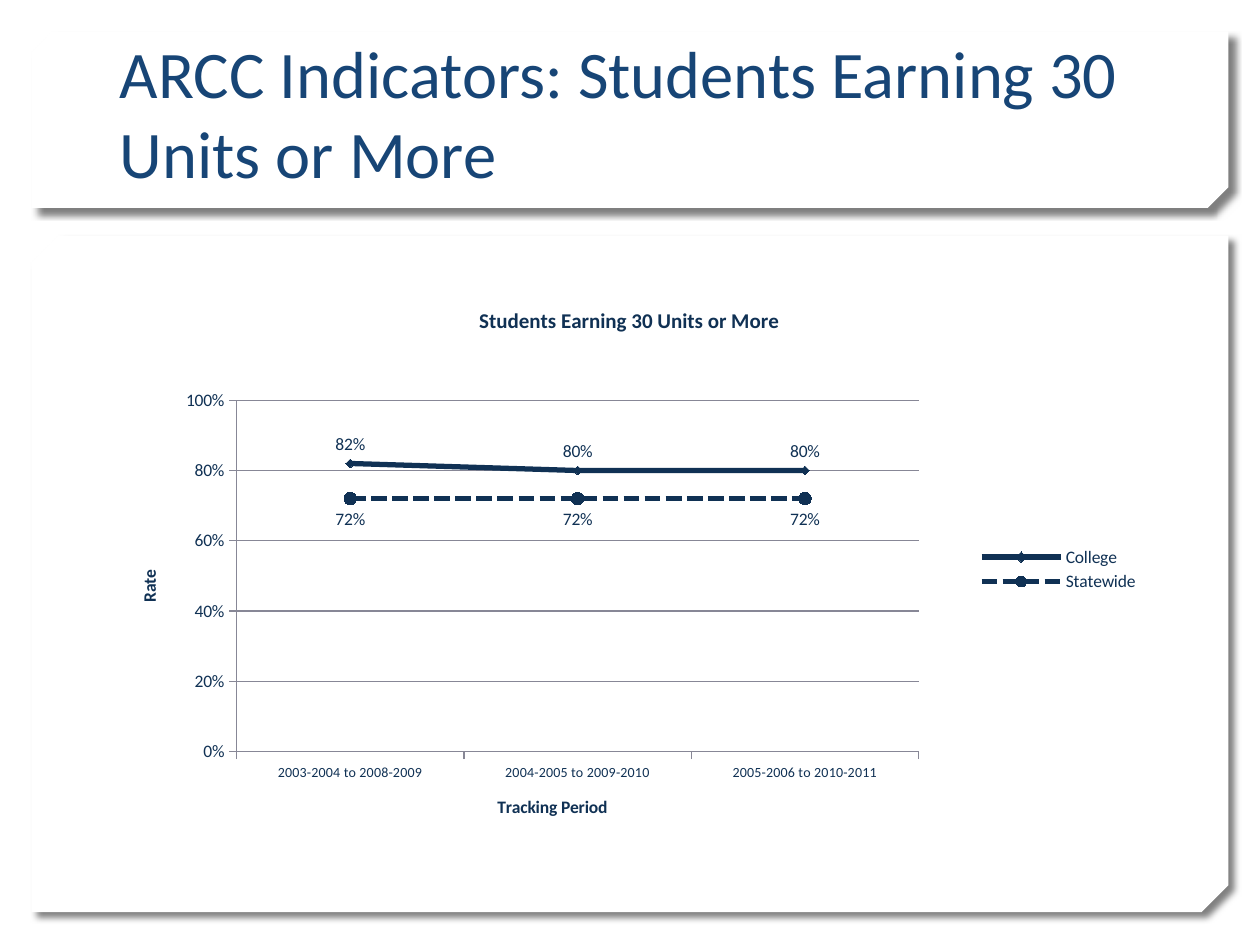
"""Build a slide with a line chart of students earning 30 units or more."""
import lxml.etree
import pptx
import pptx.chart.data
import pptx.dml.color
import pptx.enum.chart
import pptx.enum.dml
import pptx.enum.shapes
import pptx.enum.text
import pptx.oxml
import pptx.oxml.ns
import pptx.util

Pt = pptx.util.Pt
chart_enum = pptx.enum.chart

COLORS = {"panel": "FFFFFF", "title": "174576", "ink": "103154", "grid": "878796", "shadow": "000000"}
FONT = "Calibri"
HEADING = "ARCC Indicators: Students Earning 30 Units or More"
CHART_TITLE = "Students Earning 30 Units or More"
PERIODS = ["2003-2004 to 2008-2009", "2004-2005 to 2009-2010", "2005-2006 to 2010-2011"]
SERIES = [
    {"name": "College", "rates": [0.82, 0.80, 0.80], "dash": None,
     "marker": {"style": chart_enum.XL_MARKER_STYLE.DIAMOND, "size": 5},
     "labels": chart_enum.XL_LABEL_POSITION.ABOVE},
    {"name": "Statewide", "rates": [0.72, 0.72, 0.72],
     "dash": pptx.enum.dml.MSO_LINE_DASH_STYLE.SQUARE_DOT,
     "marker": {"style": chart_enum.XL_MARKER_STYLE.CIRCLE, "size": 7},
     "labels": chart_enum.XL_LABEL_POSITION.BELOW},
]
PANELS = [{"box": (18, 134.64, 684, 386.64), "snip": 0.04}, {"box": (18, 18, 684, 100.8), "snip": 0.117}]
TITLE_BOX = (61.2, 23.04, 596.88, 90)
CHART_BOX = (61.2, 162.72, 596.88, 325.44)
PLOT = {"layoutTarget": "inner", "xMode": "edge", "yMode": "edge",
        "x": 0.124, "y": 0.203, "w": 0.653, "h": 0.617}
RATE_AXIS = {"minimum_scale": 0, "maximum_scale": 1, "major_unit": 0.2, "has_major_gridlines": True}
SHADOW = (
    '<a:effectLst {ns}><a:outerShdw blurRad="{blur}" dist="{dist}" dir="2700000" algn="tl" rotWithShape="0">'
    '<a:srgbClr val="{color}"><a:alpha val="50000"/></a:srgbClr></a:outerShdw></a:effectLst>'
)


def rgb(name):
    return pptx.dml.color.RGBColor.from_string(COLORS[name])


def apply(target, values):
    for name, value in values.items():
        setattr(target, name, value)


def style_font(font, size, color="ink", bold=False):
    apply(font, {"name": FONT, "size": Pt(size), "bold": bold})
    font.color.rgb = rgb(color)


def add_panel(page, panel):
    shape = page.shapes.add_shape(
        pptx.enum.shapes.MSO_SHAPE.SNIP_2_DIAG_RECTANGLE, *map(Pt, panel["box"]))
    shape.adjustments[0], shape.adjustments[1] = 0, panel["snip"]
    shape.fill.solid()
    shape.fill.fore_color.rgb = rgb("panel")
    shape.line.fill.background()
    properties = shape.element.spPr
    properties.xfrm.set("flipV", "1")
    properties.append(pptx.oxml.parse_xml(SHADOW.format(
        ns=pptx.oxml.ns.nsdecls("a"), blur=Pt(4), dist=Pt(5), color=COLORS["shadow"])))


def write_title(page):
    title = page.shapes.title
    title.element.getparent().append(title.element)
    apply(title, dict(zip(("left", "top", "width", "height"), map(Pt, TITLE_BOX))))
    frame = title.text_frame
    frame.text = HEADING
    apply(frame, {"word_wrap": True, "auto_size": pptx.enum.text.MSO_AUTO_SIZE.NONE,
                  "vertical_anchor": pptx.enum.text.MSO_ANCHOR.BOTTOM})
    para = frame.paragraphs[0]
    para.alignment = pptx.enum.text.PP_ALIGN.LEFT
    style_font(para.runs[0].font, 38, "title")


def write_caption(owner, text, size):
    frame = owner.text_frame
    frame.text = text
    style_font(frame.paragraphs[0].runs[0].font, size, bold=True)


def style_axis(axis, caption, size):
    write_caption(axis.axis_title, caption, 10)
    style_font(axis.tick_labels.font, size)
    axis.major_tick_mark = chart_enum.XL_TICK_MARK.OUTSIDE
    axis.format.line.color.rgb = rgb("grid")


def style_series(series, look):
    series.smooth = False
    line = series.format.line
    line.color.rgb = rgb("ink")
    apply(line, {"width": Pt(3), "dash_style": look["dash"]})
    apply(series.marker, look["marker"])
    series.marker.format.fill.solid()
    series.marker.format.fill.fore_color.rgb = rgb("ink")
    series.marker.format.line.color.rgb = rgb("ink")
    labels = series.data_labels
    apply(labels, {"show_value": True, "position": look["labels"],
                   "number_format": "0%", "number_format_is_linked": False})
    style_font(labels.font, 10)


def place_plot(chart):
    qn = pptx.oxml.ns.qn
    area = chart.plots[0]._element.getparent()
    for old in area.findall(qn("c:layout")):
        area.remove(old)
    layout = lxml.etree.Element(qn("c:layout"))
    manual = lxml.etree.SubElement(layout, qn("c:manualLayout"))
    for tag, value in PLOT.items():
        lxml.etree.SubElement(manual, qn("c:" + tag)).set("val", str(value))
    area.insert(0, layout)


def add_rate_chart(page):
    data = pptx.chart.data.CategoryChartData(number_format="0%")
    data.categories = PERIODS
    for look in SERIES:
        data.add_series(look["name"], look["rates"])
    chart = page.shapes.add_chart(
        chart_enum.XL_CHART_TYPE.LINE_MARKERS, *map(Pt, CHART_BOX), data).chart
    style_font(chart.font, 10)
    write_caption(chart.chart_title, CHART_TITLE, 12)
    chart.chart_title.include_in_layout = False
    chart.has_legend = True
    apply(chart.legend, {"position": chart_enum.XL_LEGEND_POSITION.RIGHT, "include_in_layout": False})
    style_font(chart.legend.font, 10)
    style_axis(chart.category_axis, "Tracking Period", 8)
    rate_axis = chart.value_axis
    style_axis(rate_axis, "Rate", 10)
    apply(rate_axis, RATE_AXIS)
    rate_axis.major_gridlines.format.line.color.rgb = rgb("grid")
    apply(rate_axis.tick_labels, {"number_format": "0%", "number_format_is_linked": False})
    chart.plots[0].vary_by_categories = False
    for series, look in zip(chart.plots[0].series, SERIES):
        style_series(series, look)
    place_plot(chart)


def main():
    deck = pptx.Presentation()
    apply(deck, {"slide_width": Pt(720), "slide_height": Pt(540)})
    page = deck.slides.add_slide(deck.slide_layouts[5])
    for panel in PANELS:
        add_panel(page, panel)
    write_title(page)
    add_rate_chart(page)
    deck.save("out.pptx")


if __name__ == "__main__":
    main()
